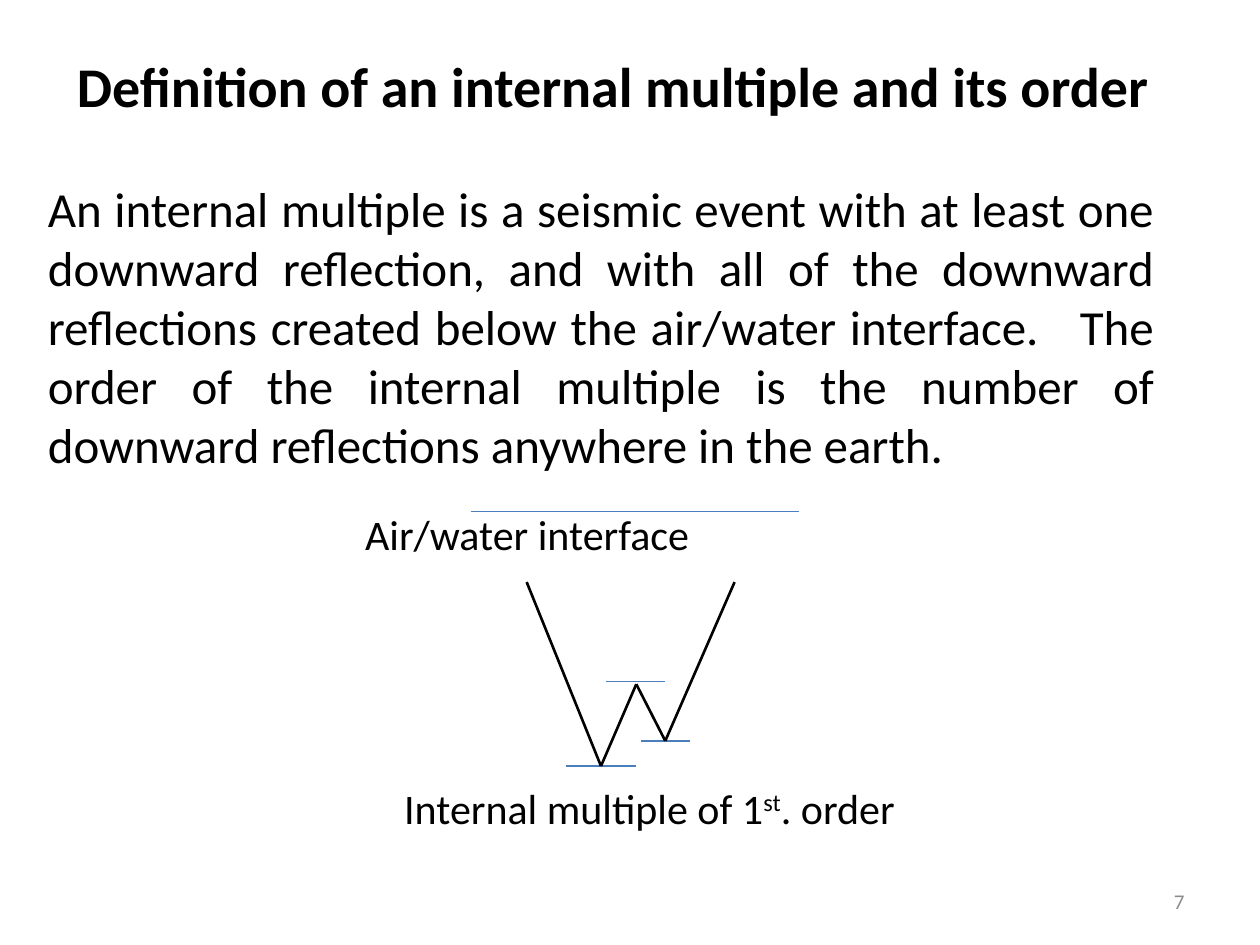
import lxml.etree
import pptx
import pptx.dml.color
import pptx.enum.shapes
import pptx.enum.text
import pptx.oxml.ns
import pptx.util

Inches, Pt = pptx.util.Inches, pptx.util.Pt
ALIGN, ANCHOR = pptx.enum.text.PP_ALIGN, pptx.enum.text.MSO_ANCHOR
BLACK, BLUE, GREY = "000000", "4B7EBC", "8C8C8C"

# Content: runs are (text, superscript offset in thousandths of a percent)
TITLE = [("Definition of an internal multiple and its order", 0)]
DEFINITION = [(
    "An internal multiple is a seismic event with at least one downward reflection, "
    "and with all of the downward reflections created below the air/water interface.   "
    "The order of the internal multiple is the number of downward reflections "
    "anywhere in the earth.", 0)]
SURFACE_LABEL = [("Air/water interface", 0)]
ORDER_LABEL = [("Internal multiple of 1", 0), ("st", 30000), (". order", 0)]
PAGE_NUMBER = [("7", 0)]

# Diagram: ray path points and reflectors (left, right, height), in inches
RAY_PATH = [(4.18, 4.62), (4.77, 6.08), (5.05, 5.43), (5.28, 5.88), (5.83, 4.62)]
REFLECTORS = [(3.74, 6.34, 4.06), (4.49, 5.05, 6.08), (4.81, 5.28, 5.41), (5.09, 5.48, 5.88)]


def colour(value):
    return pptx.dml.color.RGBColor.from_string(value)


def add_element(parent, tag):
    lxml.etree.SubElement(parent, pptx.oxml.ns.qn(tag))


def write(box, place, runs, size, ink=BLACK, bold=False, wrap=True,
          align=ALIGN.LEFT, anchor=ANCHOR.TOP):
    box.left, box.top, box.width, box.height = map(Inches, place)
    frame = box.text_frame
    frame_format = {"word_wrap": wrap, "vertical_anchor": anchor,
                    "auto_size": pptx.enum.text.MSO_AUTO_SIZE.NONE}
    for name, value in frame_format.items():
        setattr(frame, name, value)
    para = frame.paragraphs[0]
    para.alignment, para.space_before = align, Pt(0)
    for text, raised in runs:
        span = para.add_run()
        span.text = text
        for name, value in {"name": "Calibri", "size": Pt(size), "bold": bold}.items():
            setattr(span.font, name, value)
        span.font.color.rgb = colour(ink)
        if raised:
            span._r.get_or_add_rPr().set("baseline", str(raised))
    return para


def draw_line(page, start, end, ink, width):
    line = page.shapes.add_connector(
        pptx.enum.shapes.MSO_CONNECTOR.STRAIGHT, *map(Inches, start + end))
    line.line.color.rgb, line.line.width = colour(ink), Pt(width)
    add_element(line._element.spPr, "a:effectLst")


def add_box(page):
    return page.shapes.add_textbox(0, 0, 0, 0)


def main():
    deck = pptx.Presentation()
    deck.slide_width, deck.slide_height = Inches(10), Inches(7.5)
    page = deck.slides.add_slide(deck.slide_layouts[1])

    # Title and definition
    write(page.shapes.title, (0.51, 0.36, 8.8, 0.64), TITLE, 32, bold=True, wrap=False)
    para = write(page.placeholders[1], (0.28, 1.37, 8.98, 2.46), DEFINITION, 28,
                 align=ALIGN.JUSTIFY)
    settings = para._p.get_or_add_pPr()
    settings.set("marL", "0")
    settings.set("indent", "0")
    add_element(settings, "a:buNone")

    # Reflectors and ray path
    for left, right, height in REFLECTORS:
        draw_line(page, (left, height), (right, height), BLUE, 0.75)
    for start, end in zip(RAY_PATH, RAY_PATH[1:]):
        draw_line(page, start, end, BLACK, 1.5)

    # Labels and page number
    write(add_box(page), (2.8, 3.99, 2.8, 0.5), SURFACE_LABEL, 24, wrap=False)
    write(add_box(page), (3.11, 6.16, 4.13, 0.5), ORDER_LABEL, 24)
    write(add_box(page), (7.17, 6.95, 2.33, 0.4), PAGE_NUMBER, 12, ink=GREY,
          align=ALIGN.RIGHT, anchor=ANCHOR.MIDDLE)

    deck.save("out.pptx")


if __name__ == "__main__":
    main()
